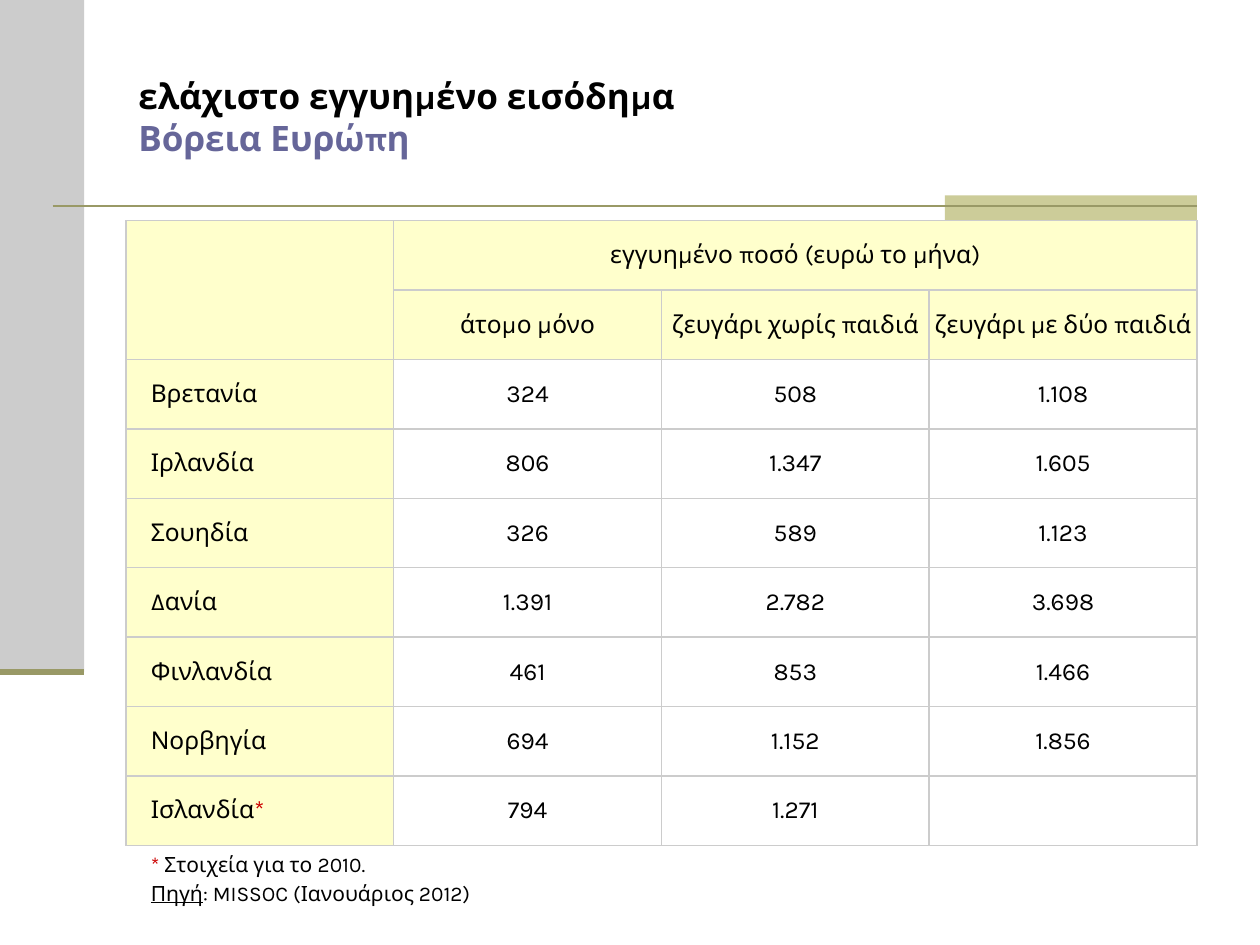
from lxml.etree import SubElement
from pptx import Presentation
from pptx.dml.color import RGBColor
from pptx.enum.shapes import MSO_CONNECTOR, MSO_SHAPE
from pptx.enum.text import MSO_ANCHOR, PP_ALIGN
from pptx.oxml.ns import qn
from pptx.util import Cm, Pt

FONT = "Karla"
GRAY, CREAM, OLIVE, RED = "CCCCCC", "FFFFCC", "999966", "CC0000"
LEFT, WIDTH = 2.54, 21.59
ROW = 1.4
STAR = ("*", {"color": RED})

HEADS = ["άτομο μόνο", "ζευγάρι χωρίς παιδιά", "ζευγάρι με δύο παιδιά"]
DATA = [
    ("Βρετανία", "324", "508", "1.108"),
    ("Ιρλανδία", "806", "1.347", "1.605"),
    ("Σουηδία", "326", "589", "1.123"),
    ("Δανία", "1.391", "2.782", "3.698"),
    ("Φινλανδία", "461", "853", "1.466"),
    ("Νορβηγία", "694", "1.152", "1.856"),
    ("Ισλανδία", "794", "1.271", ""),
]


def tint(code):
    return RGBColor.from_string(code)


def write(frame, *paras, size=14, color="000000", bold=False,
          align=PP_ALIGN.LEFT, before=0.2):
    """Each paragraph is a list of (text, format) runs."""
    for i, runs in enumerate(paras):
        para = frame.paragraphs[0] if i == 0 else frame.add_paragraph()
        para.alignment = align
        para.space_before = Pt(size * before)
        for text, form in runs:
            if text == "\n":
                para.add_line_break()
                continue
            run = para.add_run()
            run.text = text
            font = run.font
            font.name, font.size, font.bold = FONT, Pt(size), bold
            font.color.rgb = tint(form.get("color", color))
            font.underline = form.get("under", False)


def block(slide, x, y, w, h, color):
    shape = slide.shapes.add_shape(
        MSO_SHAPE.RECTANGLE, Cm(x), Cm(y), Cm(w), Cm(h))
    shape.shadow.inherit = False
    shape.fill.solid()
    shape.fill.fore_color.rgb = tint(color)
    shape.line.fill.background()


def rule(slide, x, y, end, width):
    line = slide.shapes.add_connector(
        MSO_CONNECTOR.STRAIGHT, Cm(x), Cm(y), Cm(end), Cm(y))
    line.line.color.rgb = tint(OLIVE)
    line.line.width = Pt(width)
    SubElement(line._element.spPr, qn("a:effectLst"))


def edge(cell, sides):
    """Draw the given sides of a cell and clear the others."""
    props = cell._tc.get_or_add_tcPr()
    for i, side in enumerate("LRTB"):
        line = SubElement(props, qn("a:ln" + side), w=str(Pt(1)))
        if side in sides:
            fill = SubElement(line, qn("a:solidFill"))
            SubElement(fill, qn("a:srgbClr"), val=GRAY)
        else:
            SubElement(line, qn("a:noFill"))
        props.remove(line)
        props.insert(i, line)


def style(cell, color=None, inset=0, sides="LRTB"):
    cell.vertical_anchor = MSO_ANCHOR.MIDDLE
    cell.margin_left = Cm(inset)
    cell.margin_right = cell.margin_top = cell.margin_bottom = 0
    if color:
        cell.fill.solid()
        cell.fill.fore_color.rgb = tint(color)
    else:
        cell.fill.background()
    edge(cell, sides)


def grid(slide):
    count = len(DATA) + 3
    last = count - 1
    table = slide.shapes.add_table(
        count, 4, Cm(LEFT), Cm(4.45), Cm(WIDTH), Cm(ROW * count)).table
    table.first_row = table.horz_banding = False
    for row in table.rows:
        row.height = Cm(ROW)

    # Cell look
    for r in range(count):
        for c in range(4):
            head = r < 2 or c == 0
            style(table.cell(r, c),
                  CREAM if head and r < last else None,
                  0.5 if c == 0 else 0,
                  "T" if r == last else "LRTB")

    # Merged areas
    table.cell(0, 0).merge(table.cell(1, 0))
    table.cell(0, 1).merge(table.cell(0, 3))
    table.cell(last, 0).merge(table.cell(last, 3))

    # Headings and values
    mid = PP_ALIGN.CENTER
    write(table.cell(0, 1).text_frame,
          [("εγγυημένο ποσό (ευρώ το μήνα)", {})], align=mid)
    for r, row in enumerate([("", *HEADS), *DATA], 1):
        for c, text in enumerate(row):
            if text:
                runs = [(text, {})]
                if text == "Ισλανδία":
                    runs.append(STAR)
                write(table.cell(r, c).text_frame, runs,
                      align=mid if c else PP_ALIGN.LEFT)

    # Notes
    write(table.cell(last, 0).text_frame,
          [STAR, (" Στοιχεία για το 2010.", {})],
          [("Πηγή", {"under": True}), (": MISSOC (Ιανουάριος 2012)", {})],
          size=12)


def title(slide):
    box = slide.shapes.add_textbox(Cm(LEFT), Cm(0.76), Cm(WIDTH), Cm(3.18))
    frame = box.text_frame
    frame.word_wrap = True
    frame.vertical_anchor = MSO_ANCHOR.MIDDLE
    write(frame,
          [("ελάχιστο εγγυημένο εισόδημα", {}), ("\n", {}),
           ("Βόρεια Ευρώπη", {"color": "666699"})],
          size=20, bold=True, before=0)


def main():
    deck = Presentation()
    deck.slide_width, deck.slide_height = Cm(25.4), Cm(19.05)
    slide = deck.slides.add_slide(deck.slide_layouts[6])

    # Side band, accent and rules
    block(slide, 0, 0, 1.7, 13.55, GRAY)
    block(slide, 19.05, 3.94, 5.08, 0.5, "CCCC99")
    rule(slide, 1.06, 4.15, 24.13, 1.5)
    rule(slide, 0, 13.55, 1.7, 3.5)

    title(slide)
    grid(slide)
    deck.save("out.pptx")


if __name__ == "__main__":
    main()
